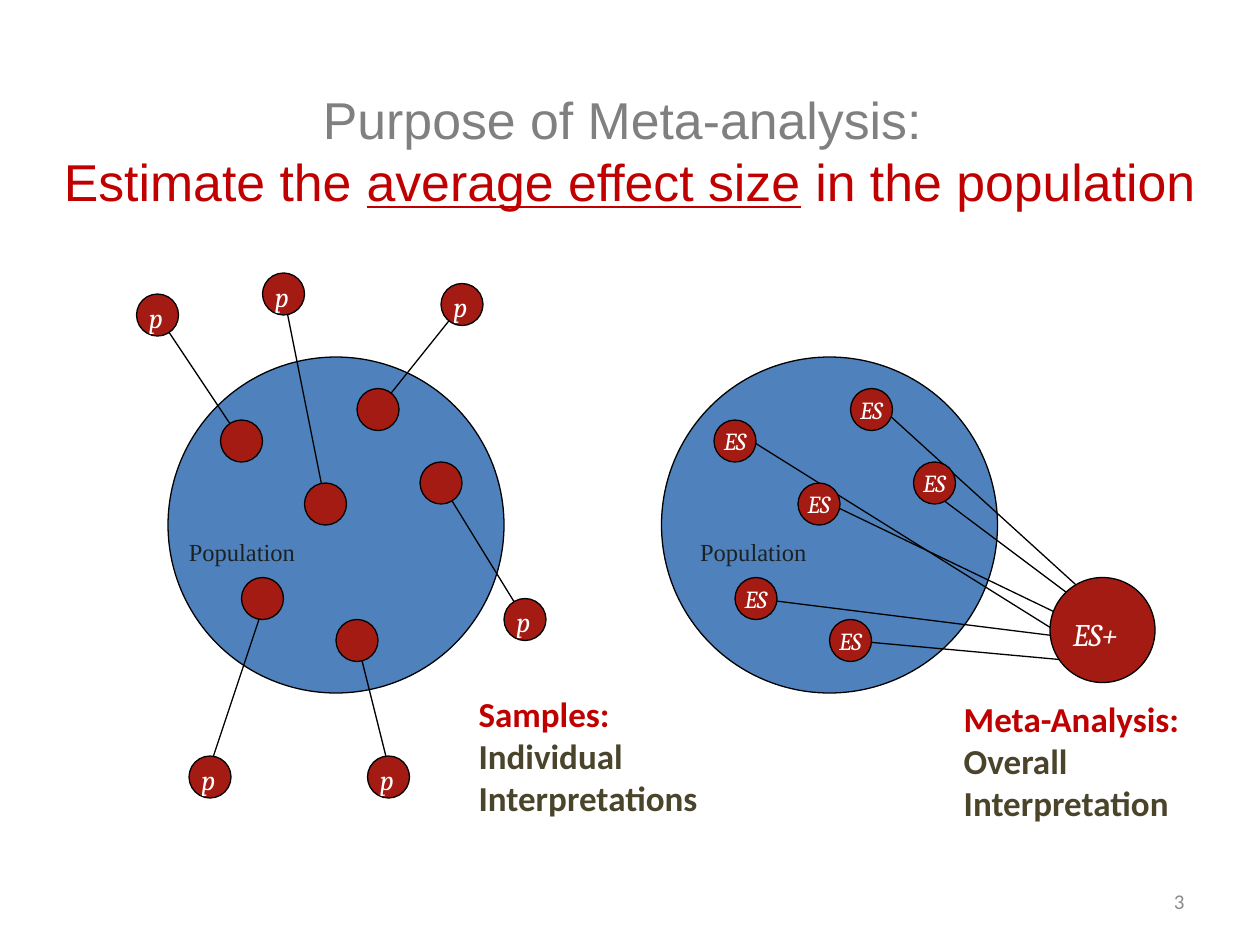
from pptx import Presentation
from pptx.dml.color import RGBColor
from pptx.enum.shapes import MSO_CONNECTOR as LINE, MSO_SHAPE as SHAPE
from pptx.enum.text import MSO_ANCHOR as ANCHOR, PP_ALIGN as ALIGN
from pptx.oxml.ns import qn
from pptx.util import Inches, Pt
from lxml.etree import SubElement

CELLS_PER_INCH = 12
RED, DARK_RED, BLUE = "C00000", "A41B14", "4F81BD"
OLIVE, WHITE, BLACK = "4A452A", "FFFFFF", "000000"
DOT, POPULATION, SUMMARY = 4, 32, 10
PANEL_SHIFT = 47

MEMBERS = [(21, 40), (29, 46), (40, 44), (23, 55), (32, 59), (34, 37)]
SAMPLES = [(25, 26), (42, 27), (48, 57), (35, 72), (18, 72), (13, 28)]
SAMPLE_LINES = [
    (34, 61, 37, 73), (27, 28, 31, 48), (15, 30, 23, 42),
    (36, 39, 44, 29), (25, 58, 20, 73), (42, 46, 50, 59),
]
EFFECT_LINES = [
    (81, 61, 103, 63), (83, 38, 105, 58), (77, 47, 104, 60),
    (72, 57, 104, 61), (89, 47, 105, 59), (70, 41, 102, 61),
]


def grid(*cells):
    return [Inches(cell / CELLS_PER_INCH) for cell in cells]


def color(hex_code):
    return RGBColor.from_string(hex_code)


def add_circle(page, left, top, size, fill):
    circle = page.shapes.add_shape(SHAPE.OVAL, *grid(left, top, size, size))
    circle.shadow.inherit = False
    circle.fill.solid()
    circle.fill.fore_color.rgb = color(fill)
    circle.line.color.rgb = color(BLACK)
    circle.line.width = Pt(0.75)


def add_line(page, *ends):
    line = page.shapes.add_connector(LINE.STRAIGHT, *grid(*ends))
    line.line.color.rgb = color(BLACK)
    line.line.width = Pt(0.75)
    SubElement(line._element.spPr, qn("a:effectLst"))


def add_text(page, area, paragraphs, font, size, align=ALIGN.LEFT,
             anchor=ANCHOR.TOP, bold=False, italic=False):
    box = page.shapes.add_textbox(*grid(*area))
    frame = box.text_frame
    frame.word_wrap = True
    frame.vertical_anchor = anchor
    for index, spans in enumerate(paragraphs):
        para = frame.add_paragraph() if index else frame.paragraphs[0]
        para.alignment = align
        para.font.name = font
        para.font.size = Pt(size)
        para.font.bold = bold
        para.font.italic = italic
        for text, hex_code, *underline in spans:
            span = para.add_run()
            span.text = text
            span.font.color.rgb = color(hex_code)
            if underline:
                span.font.underline = True


def add_symbol(page, area, text, size, align=ALIGN.LEFT):
    add_text(page, area, [[(text, WHITE)]], "Cambria", size, align, italic=True)


def add_caption(page, area, heading, body):
    add_text(page, area, [[(heading, RED), (body, OLIVE)]], "Calibri", 20, bold=True)


def add_population(page, left, lines, shift):
    add_circle(page, left, 34, POPULATION, BLUE)
    for ends in lines:
        add_line(page, *ends)
    for x, y in MEMBERS:
        add_circle(page, x + shift, y, DOT, DARK_RED)


def add_population_label(page, left):
    add_text(page, (left, 50.6, 17.3, 4), [[("Population", "1C2222")]],
             "Times New Roman", 14, ALIGN.CENTER)


def add_samples_panel(page):
    add_population(page, 16, SAMPLE_LINES, 0)
    for x, y in SAMPLES:
        add_circle(page, x, y, DOT, DARK_RED)
        add_symbol(page, (x, y, DOT, 4.4), "p", 16)
    add_caption(page, (44.4, 65.4, 25.7, 13.2), "Samples: ", "Individual Interpretations")
    add_population_label(page, 14.4)


def add_meta_panel(page):
    add_population(page, 63, EFFECT_LINES, PANEL_SHIFT)
    for x, y in MEMBERS:
        add_symbol(page, (x + PANEL_SHIFT - 1, y, DOT + 2, DOT), "ES", 14, ALIGN.CENTER)
    add_circle(page, 100, 55, SUMMARY, DARK_RED)
    add_symbol(page, (101, 58, 9.8, 4.8), "ES+", 18)
    add_caption(page, (90.6, 65.8, 26, 13.2), "Meta-Analysis: ", "Overall Interpretation")
    add_population_label(page, 63.1)


def main():
    deck = Presentation()
    deck.slide_width, deck.slide_height = Inches(10), Inches(7.5)
    page = deck.slides.add_slide(deck.slide_layouts[6])
    title = [
        [("Purpose of Meta-analysis: ", "808080")],
        [("Estimate the ", RED), ("average effect size", RED, True),
         (" in the population", RED)],
    ]
    add_text(page, (3.5, 6.25, 113, 16), title, "Arial", 29.6, ALIGN.CENTER, ANCHOR.MIDDLE)
    add_samples_panel(page)
    add_meta_panel(page)
    add_text(page, (86, 83.4, 28, 4.8), [[("3", "8C8C8C")]], "Calibri", 12,
             ALIGN.RIGHT, ANCHOR.MIDDLE)
    deck.save("out.pptx")


if __name__ == "__main__":
    main()
